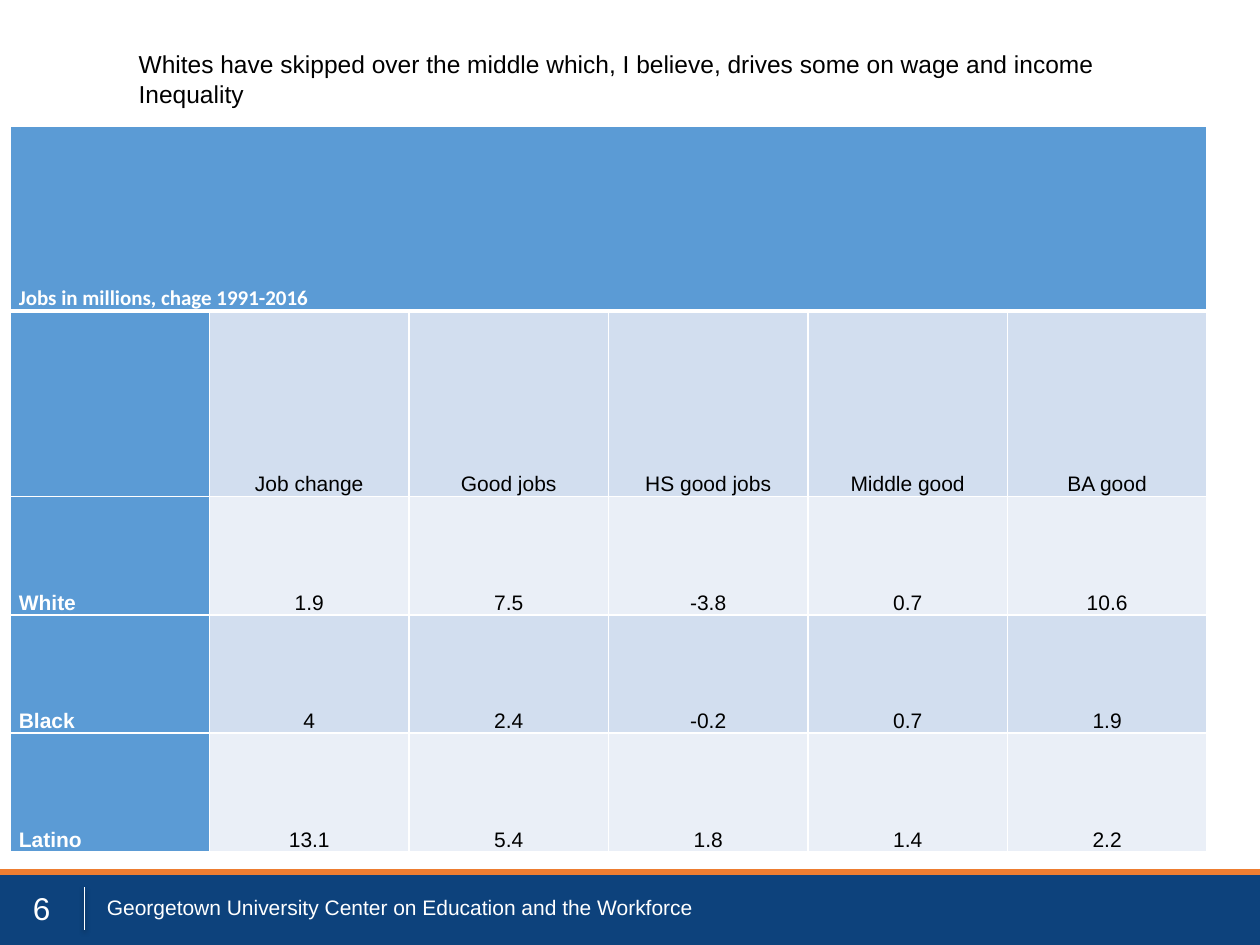
from lxml import etree
from pptx import Presentation
from pptx.dml.color import RGBColor
from pptx.enum.shapes import MSO_CONNECTOR, MSO_SHAPE
from pptx.enum.text import MSO_ANCHOR, MSO_AUTO_SIZE, PP_ALIGN
from pptx.oxml import parse_xml
from pptx.oxml.ns import nsdecls, qn
from pptx.util import Inches, Pt

LEFT, CENTER = PP_ALIGN.LEFT, PP_ALIGN.CENTER
TOP, MIDDLE, BOTTOM = MSO_ANCHOR.TOP, MSO_ANCHOR.MIDDLE, MSO_ANCHOR.BOTTOM
STRAIGHT, RECTANGLE = MSO_CONNECTOR.STRAIGHT, MSO_SHAPE.RECTANGLE
NO_AUTO_SIZE = MSO_AUTO_SIZE.NONE

TITLE_LINES = [
    "Whites have skipped over the middle which, I believe, drives some on wage and income",
    "Inequality",
]
TABLE_HEADING = "Jobs in millions, chage 1991-2016"
TABLE_ROWS = [
    ("", "Job change", "Good jobs", "HS good jobs", "Middle good", "BA good"),
    ("White", "1.9", "7.5", "-3.8", "0.7", "10.6"),
    ("Black", "4", "2.4", "-0.2", "0.7", "1.9"),
    ("Latino", "13.1", "5.4", "1.8", "1.4", "2.2"),
]
FOOTER = "Georgetown University Center on Education and the Workforce"
SLIDE_NUMBER = "6"

THEME = {
    "white": "FFFFFF", "black": "000000", "navy": "0D427C", "orange": "ED7D31",
    "header": "5B9BD5", "bands": ("D2DEEF", "EAEFF7"),
    "body_font": "Arial", "heading_font": "Calibri",
    "title_size": 14, "table_size": 12, "footer_size": 12, "number_size": 18,
}
ROW_HEIGHTS = [1.47, 1.47, 0.94, 0.94, 0.94]
TABLE_BOX = (0.08, 1, 9.5, sum(ROW_HEIGHTS))
BAR_TOP, BAR_HEIGHT = 6.92, 0.58


def color(name):
    return RGBColor.from_string(THEME.get(name, name))


def set_attributes(target, values):
    for name, value in values.items():
        setattr(target, name, value)


def write(frame, lines, size, color_name, font="body_font", bold=False, align=LEFT):
    for index, line in enumerate(lines):
        paragraph = frame.paragraphs[0] if index == 0 else frame.add_paragraph()
        run = paragraph.add_run()
        run.text = line
        set_attributes(paragraph, {"alignment": align, "line_spacing": 1.0, "space_before": Pt(0)})
        set_attributes(run.font, {"name": THEME[font], "size": Pt(THEME[size]), "bold": bold})
        run.font.color.rgb = color(color_name)


def add_line(slide, start, end, color_name, width):
    line = slide.shapes.add_connector(STRAIGHT, *map(Inches, start + end))
    line.line.color.rgb = color(color_name)
    line.line.width = Pt(width)
    return etree.SubElement(line._element.spPr, qn("a:effectLst"))


def add_shadow(effects, alpha, blur, distance):
    effects.append(parse_xml(
        f'<a:outerShdw {nsdecls("a")} blurRad="{Pt(blur)}" dist="{Pt(distance)}" dir="5400000">'
        f'<a:srgbClr val="{THEME["black"]}"><a:alpha val="{alpha * 1000}"/></a:srgbClr></a:outerShdw>'))


def add_text(slide, box, text, size, anchor, align):
    frame = slide.shapes.add_textbox(*map(Inches, box)).text_frame
    set_attributes(frame, {"word_wrap": True, "vertical_anchor": anchor})
    write(frame, [text], size, "white", align=align)


def set_borders(cell, widths):
    properties = cell._tc.get_or_add_tcPr()
    for position, (side, width) in enumerate(widths.items()):
        properties.insert(position, parse_xml(
            f'<a:ln{side} {nsdecls("a")} w="{Pt(width)}"><a:solidFill>'
            f'<a:srgbClr val="{THEME["white"]}"/></a:solidFill></a:ln{side}>'))


def add_title(slide):
    title = slide.shapes.title
    left, top, width, height = map(Inches, (1, 0.34, 7.82, 0.57))
    set_attributes(title, {"left": left, "top": top, "width": width, "height": height})
    set_attributes(title.text_frame, {
        "word_wrap": False, "vertical_anchor": TOP, "auto_size": NO_AUTO_SIZE})
    write(title.text_frame, TITLE_LINES, "title_size", "black")


def add_jobs_table(slide):
    rows = [(TABLE_HEADING,) + ("",) * (len(TABLE_ROWS[0]) - 1)] + TABLE_ROWS
    table = slide.shapes.add_table(len(rows), len(rows[0]), *map(Inches, TABLE_BOX)).table
    table.cell(0, 0).merge(table.cell(0, len(rows[0]) - 1))
    for row_index, values in enumerate(rows):
        table.rows[row_index].height = Inches(ROW_HEIGHTS[row_index])
        for column_index, value in enumerate(values):
            cell = table.cell(row_index, column_index)
            is_heading = row_index == 0
            is_label = is_heading or column_index == 0
            set_attributes(cell, {
                "vertical_anchor": BOTTOM, "margin_left": Inches(0.07),
                "margin_right": Inches(0.07), "margin_top": 0, "margin_bottom": 0})
            cell.fill.solid()
            cell.fill.fore_color.rgb = color(
                "header" if is_label else THEME["bands"][(row_index - 1) % 2])
            set_borders(cell, {
                "L": 1, "R": 1, "T": 3 if row_index == 1 else 1, "B": 3 if is_heading else 1})
            if value:
                write(cell.text_frame, [value], "table_size", "white" if is_label else "black",
                      "heading_font" if is_heading else "body_font",
                      is_label, LEFT if is_label else CENTER)


def add_footer(slide):
    bar = slide.shapes.add_shape(
        RECTANGLE, *map(Inches, (0, BAR_TOP, 10, BAR_HEIGHT)))
    bar.shadow.inherit = False
    bar.fill.solid()
    bar.fill.fore_color.rgb = color("navy")
    bar.line.fill.background()
    divider_effects = add_line(slide, (0.67, 7.04), (0.67, 7.38), "white", 1)
    add_shadow(divider_effects, 38, 3.1, 1.6)
    add_text(slide, (0.75, 7, 5.5, 0.4), FOOTER, "footer_size", MIDDLE, LEFT)
    add_line(slide, (0, BAR_TOP), (10, BAR_TOP), "orange", 3)
    add_text(slide, (0.08, 7.01, 0.5, 0.4), SLIDE_NUMBER, "number_size", TOP, CENTER)


def main():
    presentation = Presentation()
    set_attributes(presentation, {"slide_width": Inches(10), "slide_height": Inches(7.5)})
    slide = presentation.slides.add_slide(presentation.slide_layouts[5])
    add_footer(slide)
    add_jobs_table(slide)
    add_title(slide)
    presentation.save("out.pptx")


if __name__ == "__main__":
    main()
